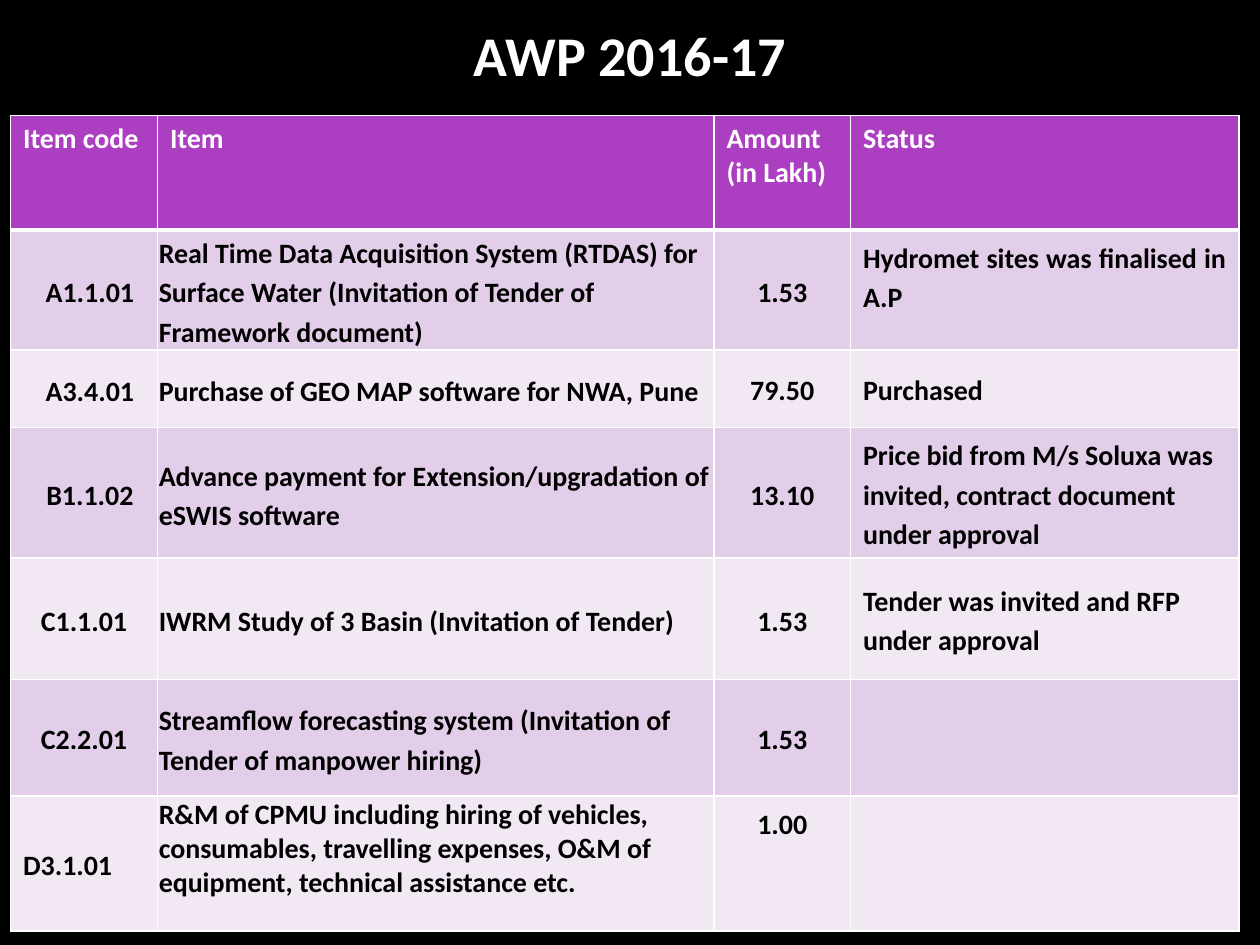
from lxml import etree
from pptx import Presentation
from pptx import util as u
from pptx.dml.color import RGBColor
from pptx.enum import text
from pptx.oxml import ns

BLACK = RGBColor(0x00, 0x00, 0x00)
WHITE = RGBColor(0xFF, 0xFF, 0xFF)
PURPLE = RGBColor(0xAC, 0x3E, 0xC1)
LILAC = RGBColor(0xE3, 0xCE, 0xE9)
PALE = RGBColor(0xF1, 0xE8, 0xF4)

LEFT, CENTER, JUSTIFY = text.PP_ALIGN.LEFT, text.PP_ALIGN.CENTER, text.PP_ALIGN.JUSTIFY
TOP, MIDDLE = text.MSO_ANCHOR.TOP, text.MSO_ANCHOR.MIDDLE


def style_font(para, size, color):
    para.font.name = "Calibri"
    para.font.size = u.Pt(size)
    para.font.bold = True
    para.font.color.rgb = color


def add_borders(cell, bottom_width):
    properties = cell._tc.get_or_add_tcPr()
    widths = {"lnL": 1, "lnR": 1, "lnT": 1, "lnB": bottom_width}
    for index, (side, width) in enumerate(widths.items()):
        line = etree.Element(ns.qn(f"a:{side}"), w=str(u.Pt(width)))
        fill = etree.SubElement(line, ns.qn("a:solidFill"))
        etree.SubElement(fill, ns.qn("a:srgbClr"), val=str(WHITE))
        properties.insert(index, line)


deck = Presentation()
deck.slide_width, deck.slide_height = u.Pt(720), u.Pt(540)
page = deck.slides.add_slide(deck.slide_layouts[6])
page.background.fill.solid()
page.background.fill.fore_color.rgb = BLACK

title = page.shapes.add_textbox(u.Pt(0), u.Pt(1.5), u.Pt(720), u.Pt(58.5)).text_frame
title.word_wrap = True
title.vertical_anchor = MIDDLE
title.text = "AWP 2016-17"
title.paragraphs[0].alignment = CENTER
style_font(title.paragraphs[0], 32, WHITE)

rows = [
    ("Item code", "Item", "Amount\n(in Lakh)", "Status"),
    ("A1.1.01",
     "Real Time Data Acquisition System (RTDAS) for Surface Water "
     "(Invitation of Tender of Framework document)",
     "1.53", "Hydromet sites was finalised in A.P"),
    ("A3.4.01", "Purchase of GEO MAP software for NWA, Pune", "79.50", "Purchased"),
    ("B1.1.02", "Advance payment for Extension/upgradation of eSWIS software",
     "13.10", "Price bid from M/s Soluxa was invited, contract document under approval"),
    ("C1.1.01", "IWRM Study of 3 Basin (Invitation of Tender)",
     "1.53", "Tender was invited and RFP under approval"),
    ("C2.2.01", "Streamflow forecasting system (Invitation of Tender of manpower hiring)",
     "1.53", ""),
    ("D3.1.01",
     "R&M of CPMU including hiring of vehicles, consumables, travelling expenses, "
     "O&M of equipment, technical assistance etc.",
     "1.00", ""),
]
column_widths = [84, 318, 78, 222]
row_heights = [65.5, 68.5, 44.5, 74.5, 69.5, 66.5, 77]
last = len(rows) - 1

table = page.shapes.add_table(
    len(rows), len(column_widths), u.Pt(6), u.Pt(66),
    u.Pt(sum(column_widths)), u.Pt(sum(row_heights))).table
for column, width in zip(table.columns, column_widths):
    column.width = u.Pt(width)
for row, height in zip(table.rows, row_heights):
    row.height = u.Pt(height)

for r, entries in enumerate(rows):
    for c, entry in enumerate(entries):
        header = r == 0
        cell = table.cell(r, c)
        cell.text = entry
        cell.fill.solid()
        cell.fill.fore_color.rgb = PURPLE if header else LILAC if r % 2 else PALE
        add_borders(cell, 3 if header else 1)

        at_top = header or (r == last and c > 0) or (r, c) == (1, 3)
        cell.vertical_anchor = TOP if at_top else MIDDLE
        if not header and (c == 1 or (c == 0 and r <= 3)):
            cell.margin_left = u.Pt(0.75 if c == 1 else 7.5)
            cell.margin_right = cell.margin_top = u.Pt(0.75)
            cell.margin_bottom = u.Pt(0)

        centered = not header and (c == 2 or (c == 0 and r < last))
        for para in cell.text_frame.paragraphs:
            para.alignment = CENTER if centered else JUSTIFY if (r, c) == (1, 3) else LEFT
            if not header and (r, c) != (last, 1):
                para.line_spacing = 1.15
            style_font(para, 16, WHITE if header else BLACK)

deck.save("out.pptx")
